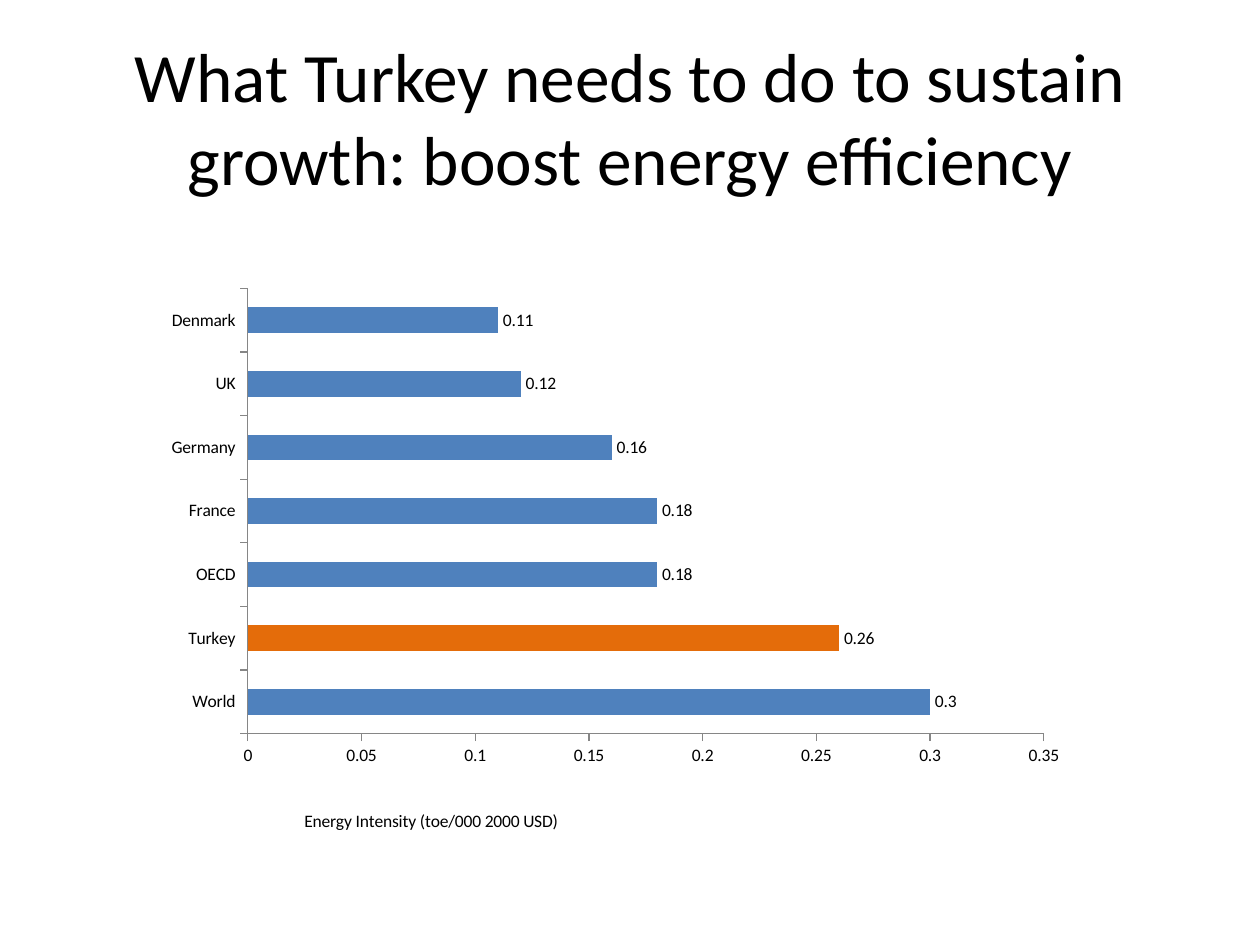
from lxml import etree
from pptx import Presentation
from pptx.chart.data import CategoryChartData
from pptx.dml.color import RGBColor
from pptx.enum.chart import XL_CHART_TYPE, XL_LABEL_POSITION, XL_TICK_MARK
from pptx.enum.text import MSO_ANCHOR, PP_ALIGN
from pptx.oxml.ns import qn
from pptx.util import Inches, Pt

BAR = XL_CHART_TYPE.BAR_CLUSTERED
OUTSIDE_END = XL_LABEL_POSITION.OUTSIDE_END
TICK_OUT = XL_TICK_MARK.OUTSIDE
MIDDLE = MSO_ANCHOR.MIDDLE
CENTER = PP_ALIGN.CENTER

BLACK = RGBColor(0x00, 0x00, 0x00)
WHITE = RGBColor(0xFF, 0xFF, 0xFF)
BLUE = RGBColor(0x4F, 0x81, 0xBD)
ORANGE = RGBColor(0xE4, 0x6C, 0x0A)
GRAY = RGBColor(0x86, 0x86, 0x86)

WIDTH, HEIGHT = Inches(10), Inches(7.5)
TITLE_BOX = (0.05, 0.04, 0.9, 1 / 6)
CHART_BOX = (0.05, 0.7 / 3, 0.9, 0.66)
PLOT_LAYOUT = {"layoutTarget": "inner", "xMode": "edge", "yMode": "edge",
               "x": 0.163, "y": 0.109, "w": 0.702, "h": 0.714}
CAPTION_LAYOUT = {"xMode": "edge", "yMode": "edge", "x": 0.21, "y": 0.94}

HEADING = "What Turkey needs to do to sustain growth: boost energy efficiency"
CAPTION = "Energy Intensity (toe/000 2000 USD)"
INTENSITY = {"World": 0.3, "Turkey": 0.26, "OECD": 0.18, "France": 0.18,
             "Germany": 0.16, "UK": 0.12, "Denmark": 0.11}
HIGHLIGHT = "Turkey"


def scale(box):
    """Turn shares of the slide into lengths."""
    left, top, width, height = box
    return (round(left * WIDTH), round(top * HEIGHT),
            round(width * WIDTH), round(height * HEIGHT))


def set_font(font, size):
    """Give a font the slide's face and colour at a size."""
    for name, value in {"name": "Calibri", "size": Pt(size), "bold": False}.items():
        setattr(font, name, value)
    font.color.rgb = BLACK


def set_layout(parent, position, values):
    """Place a chart part by hand within the chart."""
    for old in parent.findall(qn("c:layout")):
        parent.remove(old)
    layout = etree.Element(qn("c:layout"))
    manual = etree.SubElement(layout, qn("c:manualLayout"))
    for name, value in values.items():
        etree.SubElement(manual, qn(f"c:{name}")).set("val", str(value))
    parent.insert(position, layout)


def add_heading(page, box):
    """Write the centred heading in its box."""
    frame = page.shapes.add_textbox(*scale(box)).text_frame
    frame.word_wrap = True
    frame.vertical_anchor = MIDDLE
    para = frame.paragraphs[0]
    para.alignment = CENTER
    span = para.add_run()
    span.text = HEADING
    set_font(span.font, 39.6)


def style_axes(chart):
    """Set ticks, lines, scale and gridlines."""
    for axis in (chart.category_axis, chart.value_axis):
        axis.major_tick_mark = TICK_OUT
        axis.format.line.color.rgb = GRAY
        axis.format.line.width = Pt(0.75)
        set_font(axis.tick_labels.font, 10)
    scaling = {"minimum_scale": 0, "maximum_scale": 0.35, "major_unit": 0.05}
    for name, value in scaling.items():
        setattr(chart.value_axis, name, value)
    chart.value_axis.tick_labels.number_format = "General"
    chart.value_axis.tick_labels.number_format_is_linked = False
    grid = chart.value_axis.major_gridlines.format.line
    grid.color.rgb = WHITE
    grid.width = Pt(0.75)


def style_bars(plot):
    """Colour the bars, pick out one country and show the values."""
    plot.gap_width = 150
    plot.vary_by_categories = False
    series = plot.series[0]
    highlight = series.points[list(INTENSITY).index(HIGHLIGHT)]
    for item, color in ((series, BLUE), (highlight, ORANGE)):
        item.format.fill.solid()
        item.format.fill.fore_color.rgb = color
    labels = series.data_labels
    formats = {"show_value": True, "position": OUTSIDE_END,
               "number_format": "General", "number_format_is_linked": False}
    for name, value in formats.items():
        setattr(labels, name, value)
    set_font(labels.font, 10)


def add_intensity_chart(page, box):
    """Draw energy intensity by country with a caption below."""
    data = CategoryChartData()
    data.categories = list(INTENSITY)
    data.add_series("Series 1", list(INTENSITY.values()))
    chart = page.shapes.add_chart(BAR, *scale(box), data).chart
    set_font(chart.font, 10)
    chart.has_legend = False
    frame = chart.chart_title.text_frame
    frame.text = CAPTION
    set_font(frame.paragraphs[0].runs[0].font, 10)
    chart.chart_title.include_in_layout = False
    style_axes(chart)
    style_bars(chart.plots[0])
    body = chart.element.find(qn("c:chart"))
    set_layout(body.find(qn("c:title")), 1, CAPTION_LAYOUT)
    set_layout(body.find(qn("c:plotArea")), 0, PLOT_LAYOUT)


def main():
    """Build and save the slide."""
    deck = Presentation()
    deck.slide_width, deck.slide_height = WIDTH, HEIGHT
    page = deck.slides.add_slide(deck.slide_layouts[6])
    add_heading(page, TITLE_BOX)
    add_intensity_chart(page, CHART_BOX)
    deck.save("out.pptx")


if __name__ == "__main__":
    main()
